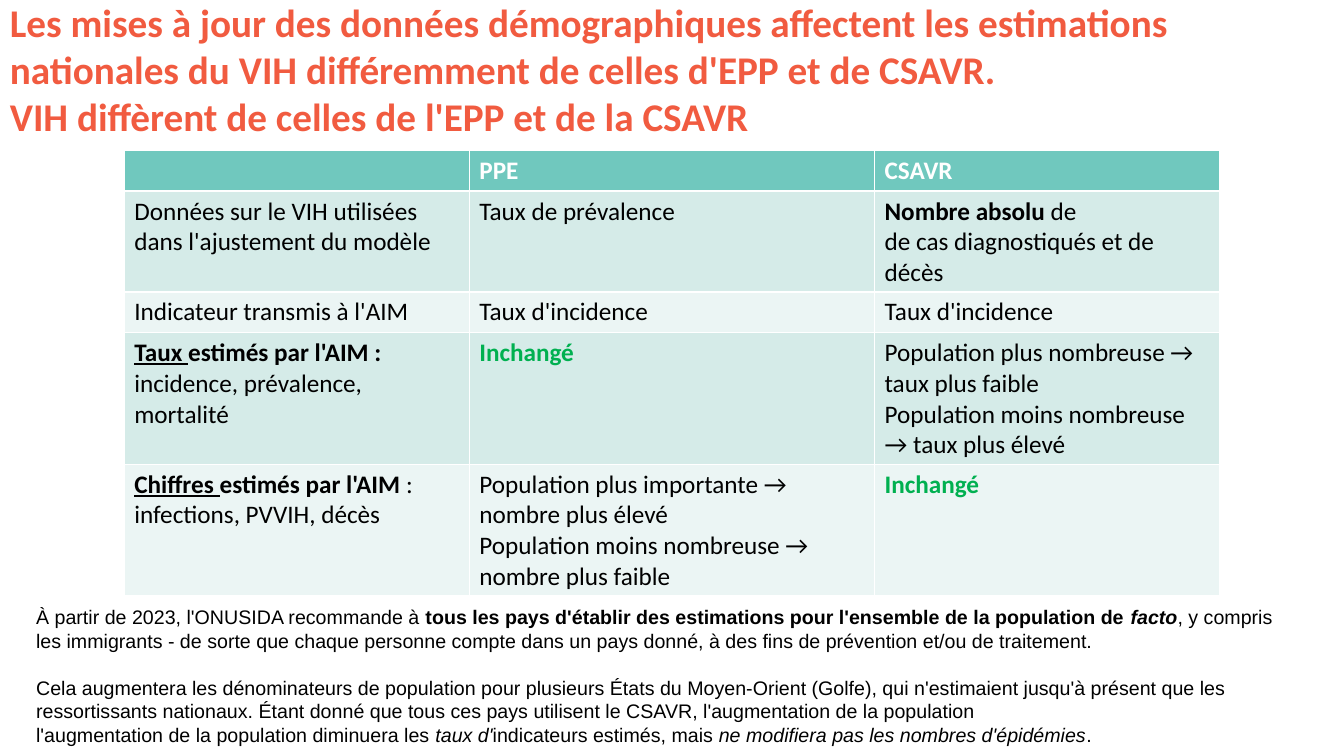
from dataclasses import dataclass

import pptx
import pptx.dml.color
import pptx.enum.text
import pptx.util

Pt = pptx.util.Pt
Color = pptx.dml.color.RGBColor.from_string


@dataclass(frozen=True)
class Theme:
    coral: str = "F15B40"
    teal: str = "70C8BE"
    bands: tuple = ("D5EBE8", "EBF5F4")
    white: str = "FFFFFF"
    black: str = "000000"
    green: str = "00B050"
    heading_font: str = "Calibri"
    note_font: str = "Arial"
    title_size: int = 28
    table_size: int = 18
    note_size: int = 14


theme = Theme()


def write(frame, paragraphs, font, size, color, gap=0):
    """Fill a frame with paragraphs of (text, style) spans; style letters are b, i and u."""
    frame.word_wrap = True
    for index, spans in enumerate(paragraphs):
        para = frame.paragraphs[0] if index == 0 else frame.add_paragraph()
        para.font.name = font
        para.font.size = Pt(size)
        para.font.color.rgb = Color(color)
        if index:
            para.space_before = Pt(gap)
        for text, style in spans:
            for line_number, line in enumerate(text.split("\n")):
                if line_number:
                    para.add_line_break()
                span = para.add_run()
                span.text = line
                span.font.bold = "b" in style
                span.font.italic = "i" in style
                span.font.underline = "u" in style


def add_text(left, top, width, height, *content):
    box = page.shapes.add_textbox(Pt(left), Pt(top), Pt(width), Pt(height))
    write(box.text_frame, *content)


deck = pptx.Presentation()
deck.slide_width, deck.slide_height = Pt(960), Pt(540)
page = deck.slides.add_slide(deck.slide_layouts[6])

title = (
    "Les mises à jour des données démographiques affectent les estimations nationales "
    "du VIH différemment de celles d'EPP et de CSAVR.\n"
    "VIH diffèrent de celles de l'EPP et de la CSAVR"
)
add_text(0, -5, 954, 109, [[(title, "b")]], theme.heading_font, theme.title_size, theme.coral)

# Each cell is a list of paragraphs, each paragraph a list of spans
unchanged = [[("Inchangé", "b")]]
incidence = [[("Taux d'incidence", "")]]
rows = [
    [[], [[("PPE", "b")]], [[("CSAVR", "b")]]],
    [
        [[("Données sur le VIH utilisées dans l'ajustement du modèle", "")]],
        [[("Taux de prévalence", "")]],
        [[("Nombre absolu ", "b"), ("de\nde cas diagnostiqués et de décès", "")]],
    ],
    [[[("Indicateur transmis à l'AIM", "")]], incidence, incidence],
    [
        [[("Taux ", "bu"), ("estimés par l'AIM :\n", "b"),
          ("incidence, prévalence, mortalité", "")]],
        unchanged,
        [[("Population plus nombreuse → taux plus faible", "")],
         [("Population moins nombreuse → taux plus élevé", "")]],
    ],
    [
        [[("Chiffres ", "bu"), ("estimés par l'AIM ", "b"),
          (": infections, PVVIH, décès", "")]],
        [[("Population plus importante → nombre plus élevé", "")],
         [("Population moins nombreuse → nombre plus faible", "")]],
        unchanged,
    ],
]
column_widths = [246.5, 289.5, 246.5]
row_heights = [29, 72, 29, 94, 94]

table = page.shapes.add_table(
    len(rows), len(column_widths),
    Pt(88.75), Pt(107.5), Pt(sum(column_widths)), Pt(sum(row_heights)),
).table
for column, width in zip(table.columns, column_widths):
    column.width = Pt(width)
for row_index, (row, height) in enumerate(zip(rows, row_heights)):
    table.rows[row_index].height = Pt(height)
    for column_index, paragraphs in enumerate(row):
        cell = table.cell(row_index, column_index)
        cell.fill.solid()
        if row_index == 0:
            fill, color = theme.teal, theme.white
        else:
            fill = theme.bands[(row_index - 1) % 2]
            color = theme.green if paragraphs is unchanged else theme.black
        cell.fill.fore_color.rgb = Color(fill)
        write(cell.text_frame, paragraphs, theme.heading_font, theme.table_size, color)

notes = [
    [
        ("À partir de 2023, l'ONUSIDA recommande à ", ""),
        ("tous les pays d'établir des estimations pour l'ensemble de la population de ", "b"),
        ("facto", "bi"),
        (", y compris les immigrants - de sorte que chaque personne compte dans un pays "
         "donné, à des fins de prévention et/ou de traitement.", ""),
    ],
    [
        ("Cela augmentera les dénominateurs de population pour plusieurs États du "
         "Moyen-Orient (Golfe), qui n'estimaient jusqu'à présent que les ressortissants "
         "nationaux. Étant donné que tous ces pays utilisent le CSAVR, l'augmentation de "
         "la population\nl'augmentation de la population diminuera les ", ""),
        ("taux d'", "i"),
        ("indicateurs estimés, mais ", ""),
        ("ne modifiera pas les nombres d'épidémies", "i"),
        (".", ""),
    ],
]
add_text(18.75, 428.5, 914.5, 109, notes, theme.note_font, theme.note_size, theme.black, 17)

deck.save("out.pptx")
